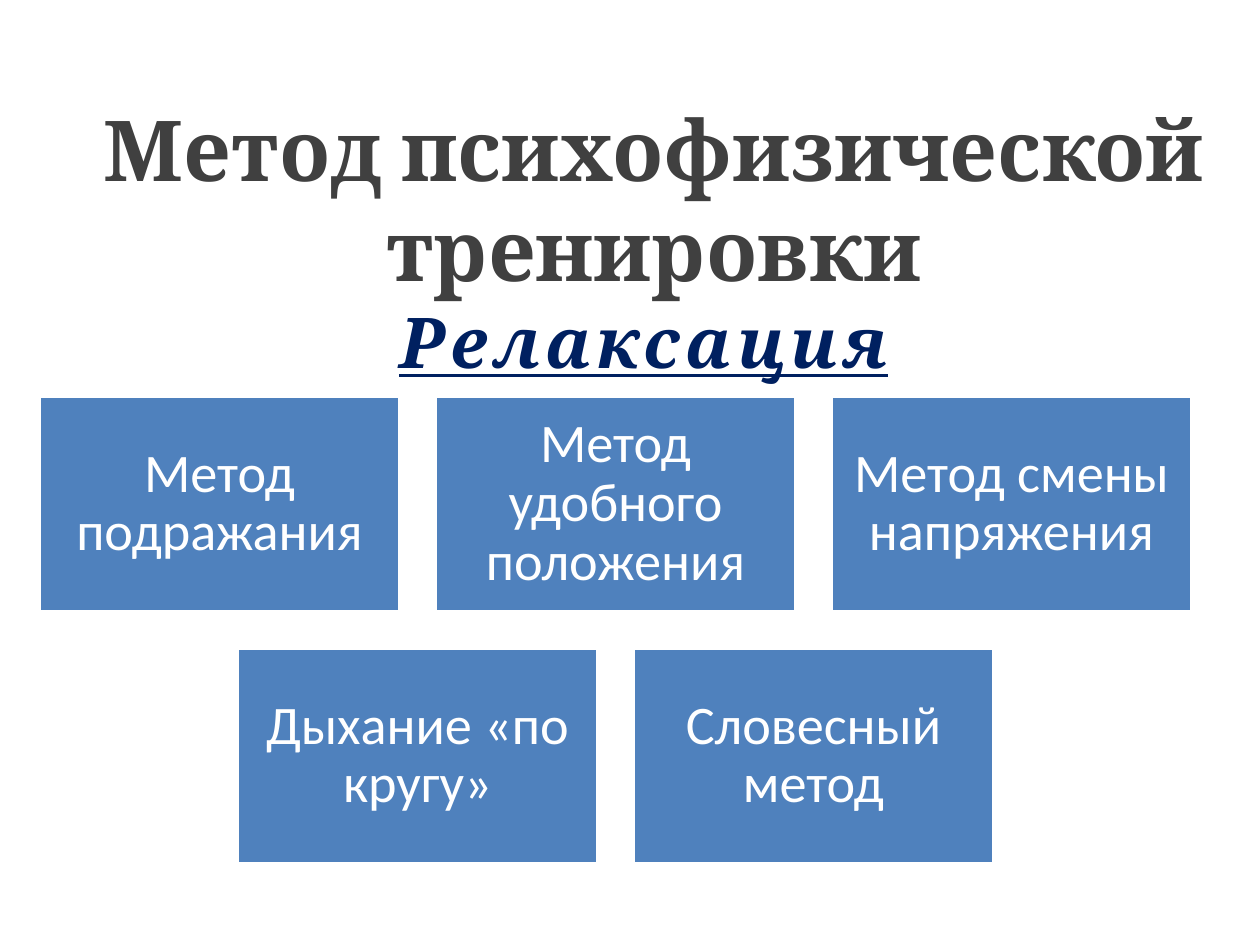
from pptx import Presentation
from pptx.dml.color import RGBColor
from pptx.enum.shapes import MSO_SHAPE
from pptx.enum.text import MSO_ANCHOR, MSO_AUTO_SIZE, PP_ALIGN
from pptx.util import Pt

RECTANGLE = MSO_SHAPE.RECTANGLE
MIDDLE = MSO_ANCHOR.MIDDLE
GROW = MSO_AUTO_SIZE.SHAPE_TO_FIT_TEXT
CENTER = PP_ALIGN.CENTER

COLORS = {"title": "404040", "subtitle": "002060", "card": "4F81BD", "white": "FFFFFF"}
FORMATS = {
    "title": {"name": "Cambria", "size": Pt(48), "bold": True},
    "subtitle": {"name": "Cambria", "size": Pt(40), "bold": True, "italic": True, "underline": True},
    "card": {"name": "Calibri", "size": Pt(31)},
}
METHOD_ROWS = [
    ["Метод подражания", "Метод удобного положения", "Метод смены напряжения"],
    ["Дыхание «по кругу»", "Словесный метод"],
]
CARD_WIDTH, CARD_HEIGHT = 205.7, 123.4
COLUMN_STEP, ROW_STEP = 226.3, 144
GRID_LEFT, GRID_TOP = 22.5, 226.2


def add_run(paragraph, text, style, color):
    run = paragraph.add_run()
    run.text = text
    for attribute, value in FORMATS[style].items():
        setattr(run.font, attribute, value)
    run.font.color.rgb = RGBColor.from_string(COLORS[color])
    return run


presentation = Presentation()
presentation.slide_width = Pt(720)
presentation.slide_height = Pt(540)
slide = presentation.slides.add_slide(presentation.slide_layouts[6])

heading = slide.shapes.add_textbox(Pt(50.4), Pt(33.8), Pt(646.6), Pt(206.6))
frame = heading.text_frame
frame.word_wrap = True
frame.auto_size = GROW
frame.vertical_anchor = MIDDLE
title = frame.paragraphs[0]
title.alignment = CENTER
add_run(title, "Метод психофизической тренировки", "title", "title")
subtitle = frame.add_paragraph()
subtitle.alignment = CENTER
for text, underlined in [("Релаксация", True), (" ", False)]:
    run = add_run(subtitle, text, "subtitle", "subtitle")
    run.font.underline = underlined
    run._r.get_or_add_rPr().set("spc", "300")

for row, methods in enumerate(METHOD_ROWS):
    row_left = GRID_LEFT + (len(METHOD_ROWS[0]) - len(methods)) * COLUMN_STEP / 2
    for column, method in enumerate(methods):
        card = slide.shapes.add_shape(
            RECTANGLE,
            Pt(row_left + column * COLUMN_STEP),
            Pt(GRID_TOP + row * ROW_STEP),
            Pt(CARD_WIDTH),
            Pt(CARD_HEIGHT),
        )
        card.shadow.inherit = False
        card.fill.solid()
        card.fill.fore_color.rgb = RGBColor.from_string(COLORS["card"])
        card.line.color.rgb = RGBColor.from_string(COLORS["white"])
        card.line.width = Pt(2)
        frame = card.text_frame
        frame.word_wrap = True
        frame.vertical_anchor = MIDDLE
        for side in ("left", "right", "top", "bottom"):
            setattr(frame, f"margin_{side}", Pt(9.3))
        paragraph = frame.paragraphs[0]
        paragraph.alignment = CENTER
        paragraph.line_spacing = 0.9
        add_run(paragraph, method, "card", "white")

presentation.save("out.pptx")
